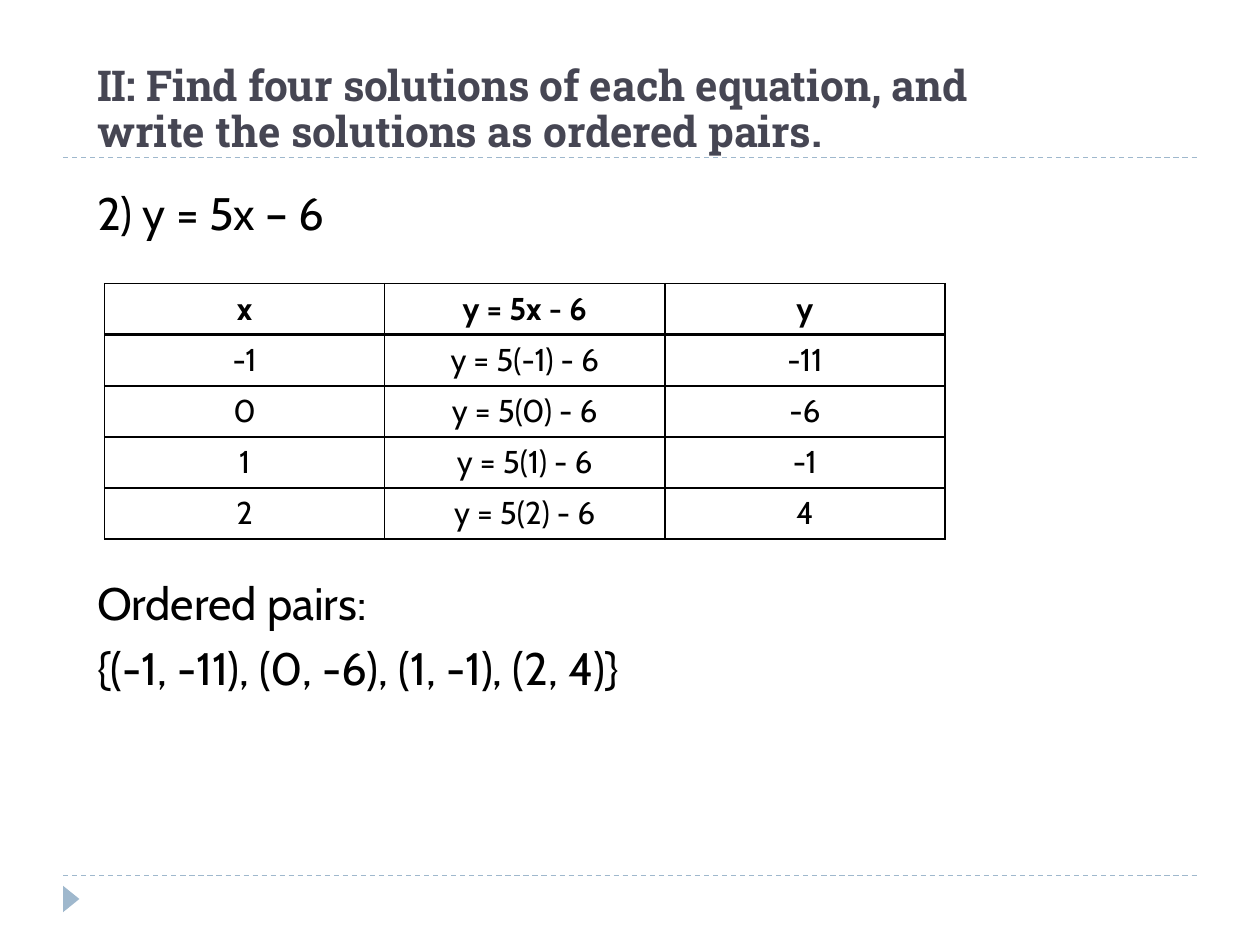
import pptx
import pptx.util
import pptx.dml.color
import pptx.enum.dml
import pptx.enum.shapes
import pptx.enum.text
import pptx.oxml.ns
from lxml import etree

Inches, Pt = pptx.util.Inches, pptx.util.Pt
ANCHOR = pptx.enum.text.MSO_ANCHOR
ALIGN = pptx.enum.text.PP_ALIGN

TITLE = ("II: Find four solutions of each equation, and write the solutions "
         "as ordered pairs.")
# (text, space before in points); the large space leaves room for the table
BODY = [
    ("2) y = 5x – 6", 6),
    ("Ordered pairs:", 191.7),
    ("{(-1, -11), (0, -6), (1, -1), (2, 4)}", 6),
]
TABLE = [
    ("x", "y = 5x - 6", "y"),
    ("-1", "y = 5(-1) - 6", "-11"),
    ("0", "y = 5(0) - 6", "-6"),
    ("1", "y = 5(1) - 6", "-1"),
    ("2", "y = 5(2) - 6", "4"),
]
THEME = {
    "heading_font": "Roboto Slab", "body_font": "Cabin",
    "ink": "000000", "heading": "464653", "accent": "9FB8CD",
    "title_size": 24.3, "body_size": 26, "cell_size": 18,
}
RULES_Y = (1.25, 6.95)


def rgb(key):
    return pptx.dml.color.RGBColor.from_string(THEME[key])


def write(p, text, size="body_size", font="body_font", color="ink",
          bold=False, align=ALIGN.LEFT, before=0, spacing=1.0):
    p.alignment = align
    p.space_before = Pt(before)
    p.line_spacing = spacing
    r = p.add_run()
    r.text = text
    r.font.name = THEME[font]
    r.font.size = Pt(THEME[size])
    r.font.bold = bold
    r.font.color.rgb = rgb(color)


def place(s, left, top, width, height, anchor):
    s.left, s.top, s.width, s.height = map(Inches, (left, top, width, height))
    tf = s.text_frame
    tf.word_wrap = True
    tf.auto_size = pptx.enum.text.MSO_AUTO_SIZE.NONE
    tf.vertical_anchor = anchor
    return tf


def remove_bullet(p):
    pPr = p._p.get_or_add_pPr()
    pPr.set("marL", "0")
    pPr.set("indent", "0")
    etree.SubElement(pPr, pptx.oxml.ns.qn("a:buNone"))


def set_borders(cell, **widths):
    """Draw cell edges; keys are L, R, T, B and values are points."""
    qn = pptx.oxml.ns.qn
    tcPr = cell._tc.get_or_add_tcPr()
    for i, (side, width) in enumerate(widths.items()):
        ln = etree.Element(qn(f"a:ln{side}"), w=str(Pt(width)))
        fill = etree.SubElement(ln, qn("a:solidFill"))
        etree.SubElement(fill, qn("a:srgbClr"), val=THEME["ink"])
        tcPr.insert(i, ln)


def add_decoration(slide):
    for y in RULES_Y:
        line = slide.shapes.add_connector(
            pptx.enum.shapes.MSO_CONNECTOR.STRAIGHT,
            Inches(0.5), Inches(y), Inches(9.5), Inches(y))
        line.line.color.rgb = rgb("accent")
        line.line.width = Pt(0.75)
        line.line.dash_style = pptx.enum.dml.MSO_LINE.DASH
        etree.SubElement(line._element.spPr, pptx.oxml.ns.qn("a:effectLst"))
    s = slide.shapes.add_shape(
        pptx.enum.shapes.MSO_SHAPE.ISOSCELES_TRIANGLE,
        Inches(0.46), Inches(7.07), Inches(0.21), Inches(0.13))
    s.rotation = 90
    s.shadow.inherit = False
    s.fill.solid()
    s.fill.fore_color.rgb = rgb("accent")
    s.line.fill.background()


def add_solution_table(slide):
    table = slide.shapes.add_table(
        len(TABLE), len(TABLE[0]), Inches(0.83), Inches(2.25),
        Inches(6.67), Inches(2.03)).table
    for i, row in enumerate(TABLE):
        for j, text in enumerate(row):
            cell = table.cell(i, j)
            cell.fill.background()
            cell.vertical_anchor = ANCHOR.MIDDLE
            set_borders(cell, L=1, R=1, T=2 if i == 1 else 1,
                        B=2 if i == 0 else 1)
            write(cell.text_frame.paragraphs[0], text, size="cell_size",
                  bold=i == 0, align=ALIGN.CENTER)


def main():
    prs = pptx.Presentation()
    prs.slide_width, prs.slide_height = Inches(10), Inches(7.5)
    slide = prs.slides.add_slide(prs.slide_layouts[1])
    title, body = slide.placeholders

    tf = place(title, 0.67, 0.3, 7.51, 0.99, ANCHOR.BOTTOM)
    write(tf.paragraphs[0], TITLE, size="title_size", font="heading_font",
          color="heading", bold=True, spacing=0.9)

    tf = place(body, 0.67, 1.42, 8.67, 4.5, ANCHOR.TOP)
    for i, (text, before) in enumerate(BODY):
        p = tf.add_paragraph() if i else tf.paragraphs[0]
        write(p, text, before=before)
        remove_bullet(p)

    add_decoration(slide)
    add_solution_table(slide)
    prs.save("out.pptx")


if __name__ == "__main__":
    main()
